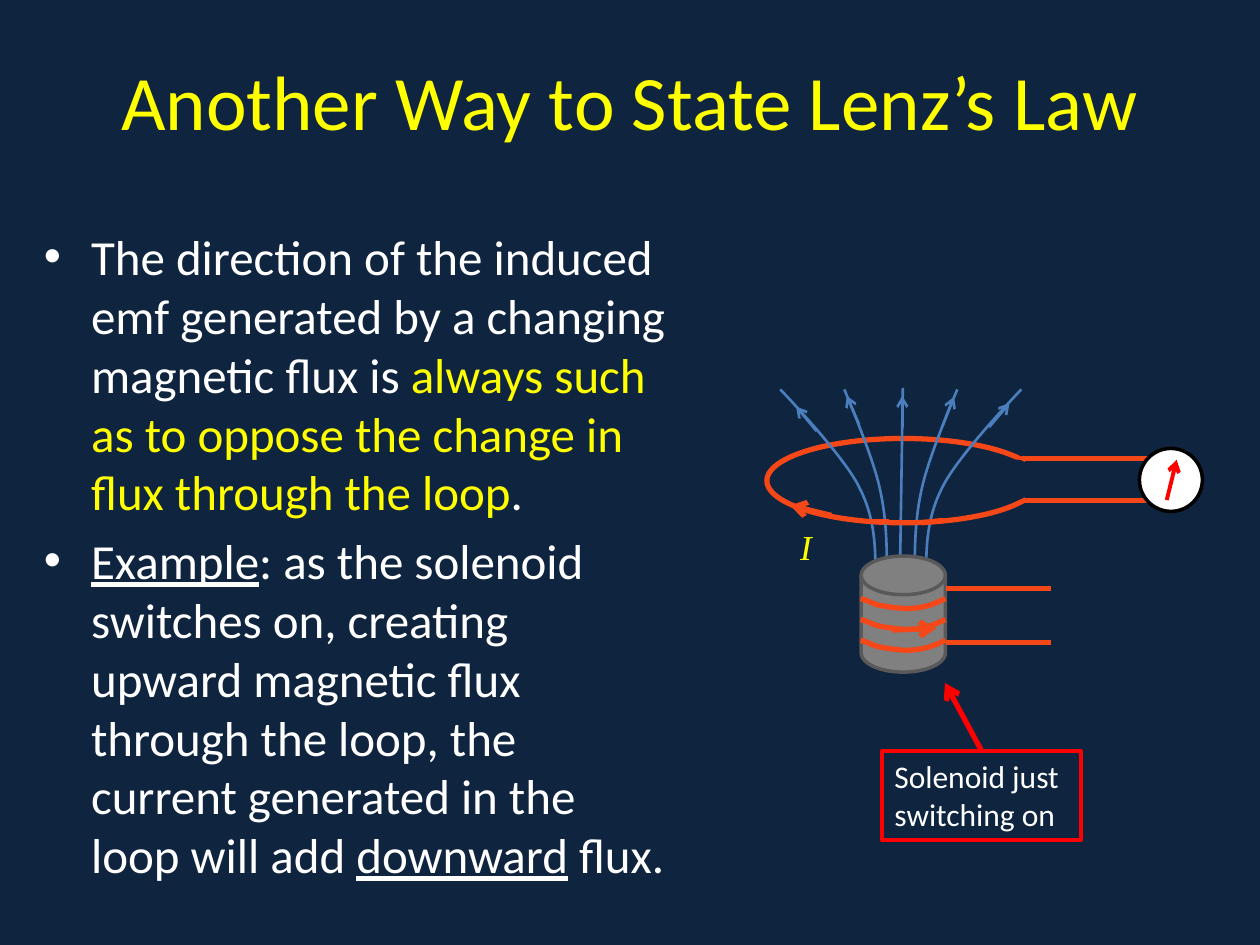
import pptx
import pptx.util
import pptx.dml.color
import pptx.enum.shapes
import pptx.enum.text
import pptx.oxml
import pptx.oxml.ns

Cm = pptx.util.Cm
Kind = pptx.enum.shapes.MSO_SHAPE
tag = pptx.oxml.ns.qn
NAVY, WHITE, YELLOW = "0F243E", "FFFFFF", "FFFF00"
ORANGE, BLUE, RED = "F54717", "4B7EBC", "FF0000"
MID = 18.16


def rgb(code):
    return pptx.dml.color.RGBColor.from_string(code)


def put(par, text, size=28, color=WHITE, font="Calibri", line=None, slant=None):
    run = par.add_run()
    run.text = text
    run.font.size = pptx.util.Pt(size)
    run.font.name = font
    run.font.color.rgb = rgb(color)
    run.font.underline = line
    run.font.italic = slant


def move(item, *box):
    item.left, item.top, item.width, item.height = map(Cm, box)


def paint(item, fill, color, width):
    item.shadow.inherit = False
    if fill:
        item.fill.solid()
        item.fill.fore_color.rgb = rgb(fill)
    else:
        item.fill.background()
    item.line.color.rgb = rgb(color)
    item.line.width = pptx.util.Pt(width)


def shape(slide, kind, box, fill, color, width):
    item = slide.shapes.add_shape(kind, *map(Cm, box))
    paint(item, fill, color, width)
    return item


def line(slide, start, end, color, width=3, head=False):
    kind = pptx.enum.shapes.MSO_CONNECTOR.STRAIGHT
    item = slide.shapes.add_connector(kind, *map(Cm, start + end))
    item.line.color.rgb = rgb(color)
    item.line.width = pptx.util.Pt(width)
    props = item._element.spPr
    if head:
        edge = props.find(tag("a:ln"))
        edge.append(edge.makeelement(tag("a:tailEnd"), {"type": "arrow"}))
    props.append(props.makeelement(tag("a:effectLst"), {}))


def curve(slide, pts, color, width):
    form = slide.shapes.build_freeform(*map(Cm, pts[0]))
    form.add_line_segments([tuple(map(Cm, pt)) for pt in pts[1:]], close=False)
    item = form.convert_to_shape()
    paint(item, None, color, width)
    legs = list(item._element.iter(tag("a:lnTo")))
    for i in range(0, len(legs) - 2, 3):
        bend = legs[i].makeelement(tag("a:cubicBezTo"), {})
        legs[i].addprevious(bend)
        for leg in legs[i:i + 3]:
            bend.append(leg[0])
            leg.getparent().remove(leg)


def words(slide):
    title, body, spare = slide.placeholders
    move(title, 1.27, 0.42, 22.86, 3.18)
    put(title.text_frame.paragraphs[0], "Another Way to State Lenz’s Law", size=44, color=YELLOW)
    move(body, 0.63, 4.44, 13.13, 14.17)
    frame = body.text_frame
    frame.auto_size = pptx.enum.text.MSO_AUTO_SIZE.NONE
    law = frame.paragraphs[0]
    put(law, "The direction of the induced emf generated by a changing magnetic flux is ")
    put(law, "always such as to oppose the change in flux through the loop", color=YELLOW)
    put(law, ".")
    case = frame.add_paragraph()
    put(case, "Example", line=True)
    put(case, ": as the solenoid switches on, creating upward magnetic flux "
              "through the loop, the current generated in the loop will add ")
    put(case, "downward", line=True)
    put(case, " flux.")
    spare._element.getparent().remove(spare._element)


def loop(slide):
    shape(slide, Kind.OVAL, (15.46, 8.84, 5.5, 1.7), None, ORANGE, 3)
    shape(slide, Kind.RECTANGLE, (20.62, 9.25, 2.54, 0.84), NAVY, ORANGE, 3)
    shape(slide, Kind.OVAL, (20.17, 9.3, 0.64, 0.74), NAVY, NAVY, 2)
    shape(slide, Kind.OVAL, (22.97, 9.04, 1.27, 1.27), WHITE, "000000", 2)
    line(slide, (23.52, 10.08), (23.72, 9.27), RED, 2.25, True)


def field(slide):
    line(slide, (18.14, 11.68), (18.2, 7.82), BLUE, 1.5)
    rows = (11.67, 11.06, 10.46, 9.82, 9.18, 7.85, 7.85, 7.85)
    inner = (0.28, 0.28, 0.28, 0.43, 0.57, 1.14, 1.14, 1.14)
    outer = (0.51, 0.51, 0.51, 0.84, 1.15, 2.43, 2.43, 2.43)
    for gaps in (inner, outer):
        for side in (1, -1):
            pts = [(MID + side * gap, y) for gap, y in zip(gaps, rows)]
            curve(slide, pts[:-1] + pts[-1:], BLUE, 1.5)
    for start, end in (
        ((18.11, 10.54), (18.54, 10.54)),
        ((18.59, 10.54), (19.02, 10.49)),
        ((17.5, 10.52), (17.93, 10.52)),
    ):
        line(slide, start, end, ORANGE)
    for start, end in (
        ((18.19, 8.61), (18.19, 7.98)),
        ((19, 8.59), (19.23, 8)),
        ((19.94, 8.61), (20.35, 8.13)),
        ((16.46, 8.69), (16.05, 8.2)),
        ((17.32, 8.56), (17.07, 7.98)),
    ):
        line(slide, start, end, BLUE, 1.5, True)


def label(slide):
    line(slide, (16.76, 10.39), (15.93, 10.19), ORANGE, 3, True)
    box = slide.shapes.add_textbox(*map(Cm, (15.88, 10.46, 1.27, 1.12)))
    box.text_frame.word_wrap = True
    put(box.text_frame.paragraphs[0], "I", size=20, color=YELLOW,
        font="Times New Roman", slant=True)


def coil(slide):
    shape(slide, Kind.FLOWCHART_MAGNETIC_DISK, (17.36, 11.21, 1.7, 2.34), "808080", "595959", 2)
    turn = ((17.35, 0), (17.64, 0.07), (17.48, 0.13), (18.24, 0.2),
            (18.73, 0.2), (18.96, 0.03), (19.06, 0), (19.06, 0))
    for top in (12.07, 12.49, 12.91):
        curve(slide, [(x, top + y) for x, y in turn], ORANGE, 3)
    for y in (11.86, 12.95):
        line(slide, (19.08, y), (21.18, y), ORANGE)


def note(slide):
    box = shape(slide, Kind.RECTANGLE, (17.78, 15.14, 4.01, 1.8), None, RED, 2.25)
    frame = box.text_frame
    frame.word_wrap = True
    frame.vertical_anchor = pptx.enum.text.MSO_ANCHOR.TOP
    par = frame.paragraphs[0]
    par.alignment = pptx.enum.text.PP_ALIGN.LEFT
    put(par, "Solenoid just switching on", size=18)
    line(slide, (19.79, 15.14), (19.05, 13.77), RED, 3, True)
    line(slide, (17.98, 12.7), (18.87, 12.67), ORANGE, 3, True)


def main():
    deck = pptx.Presentation()
    deck.slide_width, deck.slide_height = Cm(25.4), Cm(19.05)
    slide = deck.slides.add_slide(deck.slide_layouts[3])
    slide.background.fill.solid()
    slide.background.fill.fore_color.rgb = rgb(NAVY)
    words(slide)
    for draw in (loop, field, label, coil, note):
        draw(slide)
    deck.save("out.pptx")


if __name__ == "__main__":
    main()
